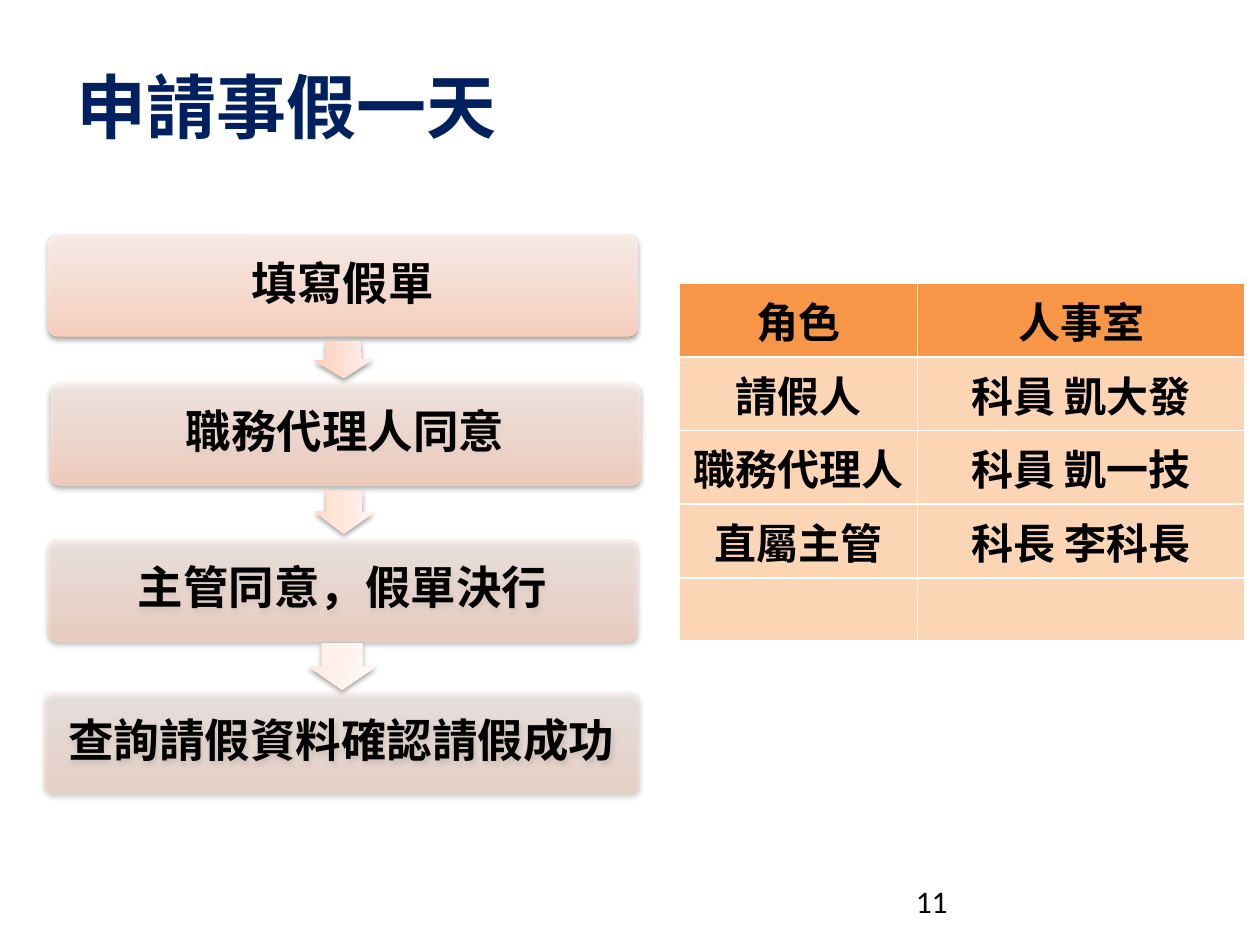
from dataclasses import dataclass

from lxml import etree
from pptx import Presentation
from pptx.dml.color import RGBColor
from pptx.enum.shapes import MSO_SHAPE
from pptx.enum.text import MSO_ANCHOR, MSO_AUTO_SIZE, PP_ALIGN
from pptx.oxml import parse_xml
from pptx.oxml.ns import qn
from pptx.util import Inches, Pt

CARD, ARROW = MSO_SHAPE.ROUNDED_RECTANGLE, MSO_SHAPE.RIGHT_ARROW
LEFT, CENTER = PP_ALIGN.LEFT, PP_ALIGN.CENTER
MIDDLE = MSO_ANCHOR.MIDDLE
NO_AUTOFIT = MSO_AUTO_SIZE.NONE

NAVY = RGBColor(0x00, 0x20, 0x60)
BLACK = RGBColor(0x00, 0x00, 0x00)
WHITE = RGBColor(0xFF, 0xFF, 0xFF)
ORANGE = RGBColor(0xF7, 0x96, 0x46)
PEACH = RGBColor(0xFC, 0xD5, 0xB5)


def rgb(*codes: str) -> tuple[RGBColor, ...]:
    return tuple(RGBColor.from_string(code) for code in codes)


CARD_COLORS = rgb("FFD2BD", "FFDED0", "FFF2ED")
GRADIENT_STOPS = (0, 35, 100)
CJK_FONT = "Noto Sans CJK SC"
DRAWING_NS = "http://schemas.openxmlformats.org/drawingml/2006/main"


@dataclass
class Step:
    text: str
    left: float
    top: float
    width: float
    opacity: int


@dataclass
class FlowArrow:
    left: float
    top: float
    width: float
    height: float
    rotation: float
    colors: tuple[RGBColor, ...]


STEPS = [
    Step("填寫假單", 0.38, 1.86, 4.68, 90),
    Step("職務代理人同意", 0.4, 3.04, 4.68, 77),
    Step("主管同意，假單決行", 0.38, 4.28, 4.68, 63),
    Step("查詢請假資料確認請假成功", 0.35, 5.49, 4.72, 50),
]
ARROWS = [
    FlowArrow(2.58, 2.62, 0.29, 0.47, 88.9, rgb("FFCDB7", "FFDBCC", "FFF1EC")),
    FlowArrow(2.56, 3.83, 0.34, 0.47, 91, rgb("FFD9C8", "FFE4D8", "FFF4F0")),
    FlowArrow(2.53, 5.02, 0.37, 0.54, 90, rgb("FFEAE1", "FFF0E9", "FFF9F6")),
]
ROLES = [
    ("角色", "人事室"),
    ("請假人", "科員 凱大發"),
    ("職務代理人", "科員 凱一技"),
    ("直屬主管", "科長 李科長"),
    ("", ""),
]
COLUMN_WIDTHS = (1.89, 2.6)


def add_run(paragraph, text: str, size: float, color: RGBColor,
            font_name: str = CJK_FONT, bold: bool = True) -> None:
    run = paragraph.add_run()
    run.text = text
    run.font.size = Pt(size)
    run.font.bold = bold
    run.font.name = font_name
    run.font.color.rgb = color
    east_asian = etree.SubElement(run.font._element, qn("a:ea"))
    east_asian.set("typeface", font_name)


def style_shape(shape, colors: tuple[RGBColor, ...], opacity: int = 100) -> None:
    """Give a shape an upward gradient, a soft shadow and no outline."""
    shape.line.fill.background()
    stops = "".join(
        f'<a:gs pos="{position * 1000}"><a:srgbClr val="{color}">'
        f'<a:alpha val="{opacity * 1000}"/></a:srgbClr></a:gs>'
        for position, color in zip(GRADIENT_STOPS, colors))
    gradient = parse_xml(
        f'<a:gradFill xmlns:a="{DRAWING_NS}" rotWithShape="1"><a:gsLst>{stops}'
        '</a:gsLst><a:lin ang="16200000" scaled="0"/></a:gradFill>')
    shadow = parse_xml(
        f'<a:effectLst xmlns:a="{DRAWING_NS}"><a:outerShdw blurRad="{Pt(3.1)}" '
        f'dist="{Pt(1.6)}" dir="5400000" rotWithShape="0"><a:srgbClr val="000000">'
        '<a:alpha val="38000"/></a:srgbClr></a:outerShdw></a:effectLst>')
    properties = shape._element.spPr
    properties.find(qn("a:prstGeom")).addnext(gradient)
    properties.find(qn("a:ln")).addnext(shadow)


def add_step(slide, step: Step) -> None:
    shape = slide.shapes.add_shape(CARD, Inches(step.left), Inches(step.top),
                                   Inches(step.width), Inches(0.81))
    shape.adjustments[0] = 0.1
    style_shape(shape, CARD_COLORS, step.opacity)
    frame = shape.text_frame
    frame.word_wrap = True
    frame.vertical_anchor = MIDDLE
    frame.margin_left = frame.margin_right = Inches(0.11)
    frame.margin_top = frame.margin_bottom = Inches(0.11)
    paragraph = frame.paragraphs[0]
    paragraph.alignment = CENTER
    paragraph.line_spacing = 0.9
    paragraph.space_after = Pt(9)
    add_run(paragraph, step.text, 26, BLACK)


def add_arrow(slide, arrow: FlowArrow) -> None:
    shape = slide.shapes.add_shape(ARROW, Inches(arrow.left), Inches(arrow.top),
                                   Inches(arrow.width), Inches(arrow.height))
    shape.adjustments[0] = 0.6
    shape.adjustments[1] = 0.5
    shape.rotation = arrow.rotation
    style_shape(shape, arrow.colors)


def set_borders(cell, bottom_width: float) -> None:
    properties = cell._tc.get_or_add_tcPr()
    widths = {"lnL": 1, "lnR": 1, "lnT": 1, "lnB": bottom_width}
    for index, (side, width) in enumerate(widths.items()):
        properties.insert(index, parse_xml(
            f'<a:{side} xmlns:a="{DRAWING_NS}" w="{Pt(width)}"><a:solidFill>'
            f'<a:srgbClr val="{WHITE}"/></a:solidFill></a:{side}>'))


def add_role_table(slide) -> None:
    table = slide.shapes.add_table(
        len(ROLES), len(COLUMN_WIDTHS), Inches(5.39), Inches(2.25),
        Inches(sum(COLUMN_WIDTHS)), Inches(2.82)).table
    for column, width in zip(table.columns, COLUMN_WIDTHS):
        column.width = Inches(width)
    for row_index, texts in enumerate(ROLES):
        table.rows[row_index].height = Inches(0.58 if any(texts) else 0.5)
        for column_index, text in enumerate(texts):
            cell = table.cell(row_index, column_index)
            cell.fill.solid()
            cell.fill.fore_color.rgb = PEACH if row_index else ORANGE
            set_borders(cell, 1)
            if text:
                paragraph = cell.text_frame.paragraphs[0]
                paragraph.alignment = CENTER
                add_run(paragraph, text, 24, BLACK)


def main() -> None:
    presentation = Presentation()
    presentation.slide_width = Inches(10)
    presentation.slide_height = Inches(7.5)
    slide = presentation.slides.add_slide(presentation.slide_layouts[5])

    # Title
    title = slide.shapes.title
    title.left, title.top = Inches(0.51), Inches(0.44)
    title.width, title.height = Inches(9), Inches(0.79)
    title.text_frame.auto_size = NO_AUTOFIT
    title.text_frame.vertical_anchor = MIDDLE
    title.text_frame.paragraphs[0].alignment = LEFT
    add_run(title.text_frame.paragraphs[0], "申請事假一天", 40, NAVY)

    # Leave request flow
    for step in STEPS:
        add_step(slide, step)
    for arrow in ARROWS:
        add_arrow(slide, arrow)

    # Roles in the request
    add_role_table(slide)

    # Page number
    page_number = slide.shapes.add_textbox(Inches(7.17), Inches(6.95),
                                           Inches(2.33), Inches(0.4))
    page_number.text_frame.word_wrap = True
    add_run(page_number.text_frame.paragraphs[0], "11", 18, BLACK, "Calibri", False)

    presentation.save("out.pptx")


if __name__ == "__main__":
    main()
